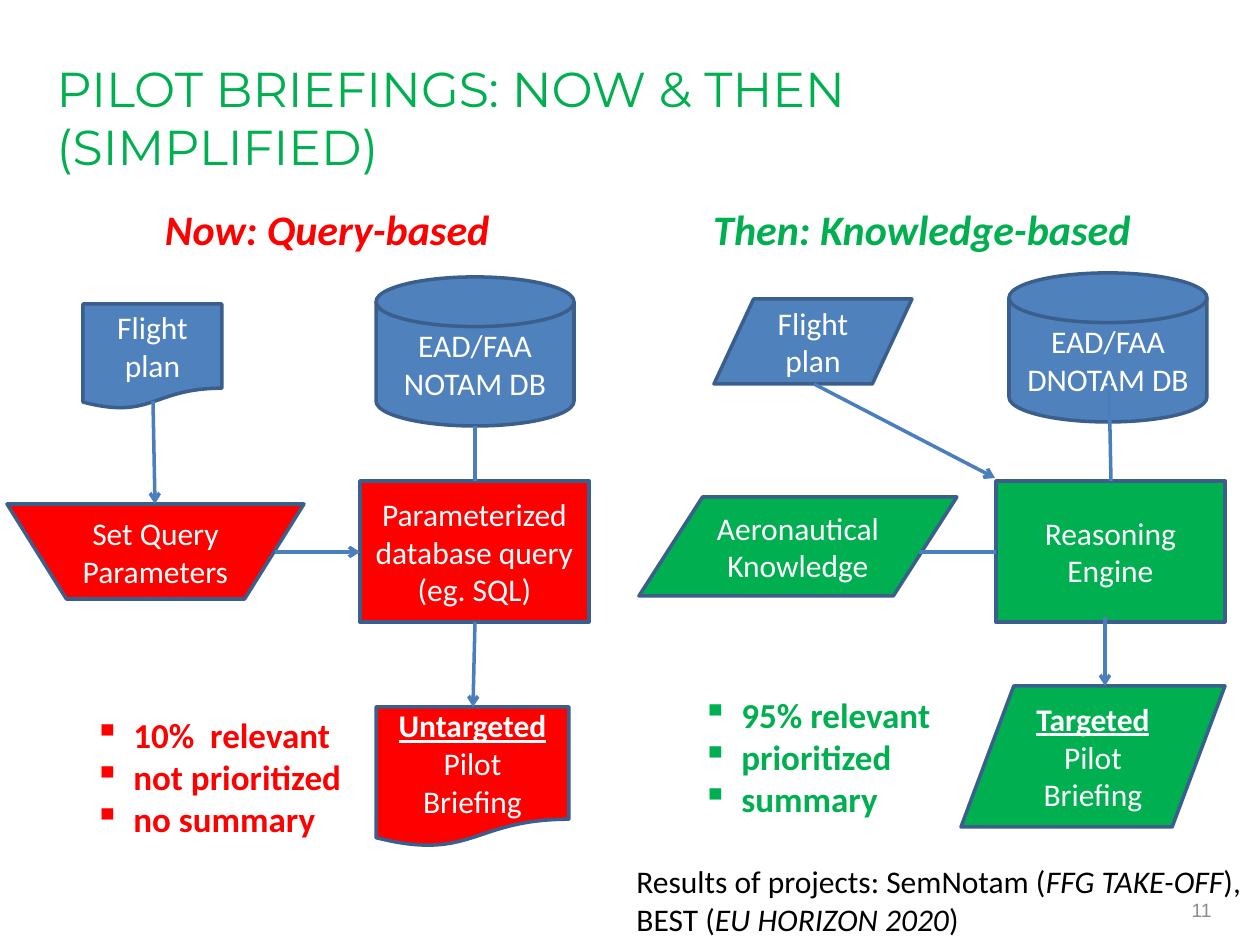
from dataclasses import dataclass

from lxml import etree
from pptx import Presentation
from pptx import util as u
from pptx.dml.color import RGBColor
from pptx.enum import shapes, text
from pptx.oxml.ns import qn

PX_PER_INCH = 126
COLOURS = {
    "now": "FF0000",
    "then": "00B050",
    "source": "4F81BD",
    "outline": "3A5F8C",
    "flow": "4B7EBC",
    "white": "FFFFFF",
    "black": "000000",
    "number": "8C8C8C",
}
KIND = shapes.MSO_SHAPE
ALIGN = text.PP_ALIGN
ANCHOR = text.MSO_ANCHOR


@dataclass(frozen=True)
class Box:
    left: int
    top: int
    width: int
    height: int


@dataclass(frozen=True)
class Span:
    words: str
    bold: bool = False
    italic: bool = False
    underline: bool = False


@dataclass(frozen=True)
class Node:
    kind: KIND
    box: Box
    fill: str
    spans: tuple[Span, ...]


@dataclass(frozen=True)
class Flow:
    start: tuple[int, int]
    end: tuple[int, int]
    arrow: bool = True


@dataclass(frozen=True)
class Heading:
    box: Box
    words: str
    colour: str


@dataclass(frozen=True)
class Outcome:
    box: Box
    points: tuple[str, ...]
    colour: str


HEADINGS = [
    Heading(Box(54, 197, 556, 684), "Now: Query-based ", "now"),
    Heading(Box(639, 197, 566, 512), "Then: Knowledge-based", "then"),
]
NODES = [
    Node(KIND.FLOWCHART_MAGNETIC_DISK, Box(376, 277, 198, 149), "source", (Span("EAD/FAA\nNOTAM DB"),)),
    Node(KIND.FLOWCHART_DOCUMENT, Box(83, 304, 139, 105), "source", (Span("Flight plan"),)),
    Node(KIND.FLOWCHART_DOCUMENT, Box(376, 707, 193, 140), "now",
         (Span("Untargeted ", bold=True, underline=True), Span("Pilot\nBriefing"))),
    Node(KIND.FLOWCHART_MANUAL_OPERATION, Box(7, 504, 297, 95), "now", (Span("Set Query Parameters"),)),
    Node(KIND.FLOWCHART_PROCESS, Box(360, 481, 229, 141), "now",
         (Span("Parameterized database query (eg. SQL)"),)),
    Node(KIND.FLOWCHART_MAGNETIC_DISK, Box(1009, 273, 198, 149), "source", (Span("EAD/FAA\nDNOTAM DB"),)),
    Node(KIND.FLOWCHART_PROCESS, Box(996, 481, 229, 141), "then", (Span("Reasoning Engine"),)),
    Node(KIND.FLOWCHART_DATA, Box(714, 299, 198, 85), "source", (Span("Flight plan"),)),
    Node(KIND.FLOWCHART_DATA, Box(639, 497, 318, 99), "then", (Span("Aeronautical Knowledge"),)),
    Node(KIND.FLOWCHART_DATA, Box(961, 686, 264, 141), "then",
         (Span("Targeted", bold=True, underline=True), Span(" ", bold=True), Span("Pilot Briefing"))),
]
FLOWS = [
    Flow((275, 552), (360, 552)),
    Flow((475, 622), (473, 707)),
    Flow((153, 401), (155, 504)),
    Flow((475, 426), (475, 481), arrow=False),
    Flow((1109, 379), (1111, 481), arrow=False),
    Flow((1105, 617), (1105, 686)),
    Flow((814, 384), (995, 478)),
    Flow((919, 552), (996, 552), arrow=False),
]
OUTCOMES = [
    Outcome(Box(82, 707, 277, 140), ("10%  relevant", "not prioritized", "no summary"), "now"),
    Outcome(Box(690, 687, 277, 140), ("95% relevant", "prioritized", "summary"), "then"),
]
PROJECTS = (
    Span("Results of projects: SemNotam ("),
    Span("FFG TAKE-OFF", italic=True),
    Span("),\nBEST ("),
    Span("EU HORIZON 2020", italic=True),
    Span(")"),
)


def px(length: int) -> u.Emu:
    return u.Emu(round(length * 914400 / PX_PER_INCH))


def rgb(colour: str) -> RGBColor:
    return RGBColor.from_string(COLOURS[colour])


def bounds(box: Box) -> tuple[u.Emu, ...]:
    return px(box.left), px(box.top), px(box.width), px(box.height)


def set_font(paragraph, size: int, colour: str, name: str = "Calibri") -> None:
    paragraph.font.size = u.Pt(size)
    paragraph.font.name = name
    paragraph.font.color.rgb = rgb(colour)


def write_spans(paragraph, spans: tuple[Span, ...], size: int, colour: str) -> None:
    set_font(paragraph, size, colour)
    for span in spans:
        for index, line in enumerate(span.words.split("\n")):
            if index:
                paragraph.add_line_break()
            run = paragraph.add_run()
            run.text = line
            run.font.bold = span.bold
            run.font.italic = span.italic
            run.font.underline = span.underline


def add_frame(slide, box: Box, wrap: bool = True):
    frame = slide.shapes.add_textbox(*bounds(box)).text_frame
    frame.word_wrap = wrap
    return frame


def add_title(slide) -> None:
    title = slide.shapes.title
    title.left, title.top, title.width, title.height = bounds(Box(44, 45, 942, 137))
    frame = title.text_frame
    frame.text = "PILOT BRIEFINGS: NOW & THEN (SIMPLIFIED)"
    frame.auto_size = text.MSO_AUTO_SIZE.NONE
    frame.vertical_anchor = ANCHOR.BOTTOM
    paragraph = frame.paragraphs[0]
    paragraph.alignment = ALIGN.LEFT
    set_font(paragraph, 28, "then", "Montserrat")


def add_heading(slide, heading: Heading) -> None:
    paragraph = add_frame(slide, heading.box).paragraphs[0]
    paragraph.text = heading.words
    paragraph.alignment = ALIGN.CENTER
    set_font(paragraph, 24, heading.colour)
    paragraph.font.bold = paragraph.font.italic = True


def add_node(slide, node: Node) -> None:
    shape = slide.shapes.add_shape(node.kind, *bounds(node.box))
    shape.shadow.inherit = False
    shape.fill.solid()
    shape.fill.fore_color.rgb = rgb(node.fill)
    shape.line.color.rgb = rgb("outline")
    shape.line.width = u.Pt(2)
    frame = shape.text_frame
    frame.word_wrap = True
    frame.vertical_anchor = ANCHOR.MIDDLE
    frame.paragraphs[0].alignment = ALIGN.CENTER
    write_spans(frame.paragraphs[0], node.spans, 18, "white")


def add_flow(slide, flow: Flow) -> None:
    ends = [px(value) for value in flow.start + flow.end]
    connector = slide.shapes.add_connector(shapes.MSO_CONNECTOR.STRAIGHT, *ends)
    connector.line.color.rgb = rgb("flow")
    connector.line.width = u.Pt(2)
    if flow.arrow:
        etree.SubElement(connector.line._get_or_add_ln(), qn("a:tailEnd"), type="arrow")
    etree.SubElement(connector._element.spPr, qn("a:effectLst"))


def add_outcome(slide, outcome: Outcome) -> None:
    frame = add_frame(slide, outcome.box)
    for index, point in enumerate(outcome.points):
        paragraph = frame.add_paragraph() if index else frame.paragraphs[0]
        paragraph.text = point
        properties = paragraph._p.get_or_add_pPr()
        properties.set("marL", str(px(39)))
        properties.set("indent", str(-px(39)))
        etree.SubElement(properties, qn("a:buChar"), char="▪")
        set_font(paragraph, 20, outcome.colour)
        paragraph.font.bold = True


def add_number(slide) -> None:
    frame = add_frame(slide, Box(1153, 885, 71, 50))
    frame.vertical_anchor = ANCHOR.MIDDLE
    paragraph = frame.paragraphs[0]
    paragraph.text = "11"
    paragraph.alignment = ALIGN.RIGHT
    set_font(paragraph, 11, "number", "Arial")


def main() -> None:
    deck = Presentation()
    deck.slide_width, deck.slide_height = px(1260), px(945)
    slide = deck.slides.add_slide(deck.slide_layouts[5])
    add_title(slide)
    add_number(slide)
    for draw, parts in ((add_heading, HEADINGS), (add_node, NODES), (add_flow, FLOWS), (add_outcome, OUTCOMES)):
        for part in parts:
            draw(slide, part)
    projects = add_frame(slide, Box(624, 856, 636, 89), wrap=False)
    write_spans(projects.paragraphs[0], PROJECTS, 18, "black")
    deck.save("out.pptx")


if __name__ == "__main__":
    main()
